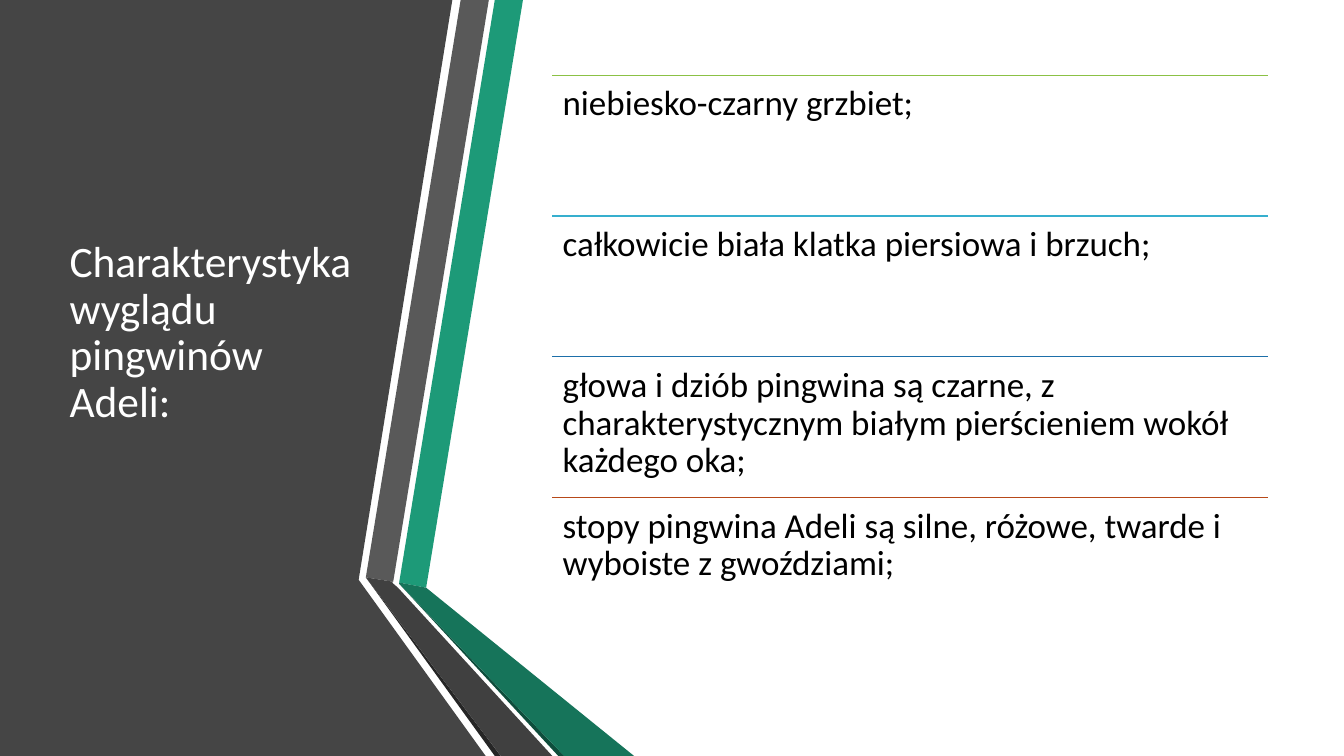
from lxml import etree
from pptx import Presentation
from pptx import util as u
from pptx.dml.color import RGBColor
from pptx.enum import shapes, text
from pptx.oxml.ns import qn

FONT = "Calibri"
PAGE_WIDTH, PAGE_HEIGHT = 33.87, 19.05

PANEL = [(0, 0), (11.4, 0), (9.04, 14.61), (12.24, 19.05), (0, 19.05)]
RIBBONS = [
    ("1D9A78", [(10.06, 14.68), (10.74, 14.81), (13.18, 0), (12.47, 0)]),
    ("595959", [(12.32, 0), (11.61, 0), (9.22, 14.55), (9.91, 14.66)]),
    ("262626", [(9.22, 14.55), (12.47, 19.05), (12.62, 19.05)]),
    ("0E4D3C", [(10.06, 14.71), (14.07, 19.05), (14.22, 19.05)]),
    ("16745A", [(10.06, 14.71), (14.22, 19.05), (15.98, 19.05),
                (10.74, 14.81), (10.06, 14.68)]),
    ("404040", [(13.92, 19.05), (10.03, 14.81), (9.88, 14.68),
                (9.91, 14.66), (9.22, 14.55), (12.62, 19.05)]),
]
TITLE = "Charakterystyka\vwyglądu pingwinów Adeli:"
FEATURES = [
    ("8BC145", "niebiesko-czarny grzbiet;"),
    ("36AFCE", "całkowicie biała klatka piersiowa i brzuch;"),
    ("1D6FA9", "głowa i dziób pingwina są czarne, "
               "z charakterystycznym białym pierścieniem wokół każdego oka;"),
    ("B74919", "stopy pingwina Adeli są silne, różowe, twarde "
               "i wyboiste z gwoździami;"),
]


def color(value):
    return RGBColor.from_string(value)


def format_text(frame, size, value):
    frame.word_wrap = True
    frame.auto_size = text.MSO_AUTO_SIZE.NONE
    for para in frame.paragraphs:
        para.alignment = text.PP_ALIGN.LEFT
        para.line_spacing = 0.9
        for span in para.runs:
            span.font.name = FONT
            span.font.size = u.Pt(size)
            span.font.color.rgb = color(value)


def add_polygon(parent, left, top, points, fill):
    corners = [(u.Cm(left + x), u.Cm(top + y)) for x, y in points]
    builder = parent.shapes.build_freeform(*corners[0])
    builder.add_line_segments(corners[1:], close=True)
    polygon = builder.convert_to_shape()
    polygon.shadow.inherit = False
    polygon.fill.solid()
    polygon.fill.fore_color.rgb = color(fill)
    polygon.line.fill.background()


def add_backdrop(page, left, top):
    add_polygon(page, left, top, PANEL, "454545")
    ribbons = page.shapes.add_group_shape()
    for fill, points in RIBBONS:
        add_polygon(ribbons, left, top, points, fill)


def place_title(page, left, top, width, height):
    title = page.shapes.title
    title.left, title.top = u.Cm(left), u.Cm(top)
    title.width, title.height = u.Cm(width), u.Cm(height)
    frame = title.text_frame
    frame.text = TITLE
    frame.vertical_anchor = text.MSO_ANCHOR.MIDDLE
    frame.margin_bottom = u.Cm(1.3)
    format_text(frame, 31, "FFFFFF")


def add_rule(parent, left, top, width, value):
    rule = parent.shapes.add_connector(
        shapes.MSO_CONNECTOR.STRAIGHT,
        u.Cm(left), u.Cm(top), u.Cm(left + width), u.Cm(top))
    rule.line.color.rgb = color(value)
    rule.line.width = u.Pt(1)
    etree.SubElement(rule._element.spPr, qn("a:effectLst"))


def add_feature(parent, left, top, width, height, wording):
    box = parent.shapes.add_textbox(
        u.Cm(left), u.Cm(top), u.Cm(width), u.Cm(height))
    frame = box.text_frame
    frame.margin_left = frame.margin_right = u.Cm(0.26)
    frame.margin_top = frame.margin_bottom = u.Cm(0.26)
    frame.text = wording
    format_text(frame, 25, "000000")


def add_feature_list(page, left, top, width, height):
    features = page.shapes.add_group_shape()
    row_height = height / len(FEATURES)
    for index, (value, wording) in enumerate(FEATURES):
        row_top = top + index * row_height
        add_rule(features, left, row_top, width, value)
        add_feature(features, left, row_top, width, row_height, wording)


def main():
    deck = Presentation()
    deck.slide_width = u.Cm(PAGE_WIDTH)
    deck.slide_height = u.Cm(PAGE_HEIGHT)
    page = deck.slides.add_slide(deck.slide_layouts.get_by_name("Title Only"))
    page.background.fill.solid()
    page.background.fill.fore_color.rgb = color("FFFFFF")
    add_backdrop(page, 0, 0)
    place_title(page, 1.5, 1.9, 7.72, 14.18)
    title = page.shapes.title._element
    title.getparent().append(title)
    add_feature_list(page, 13.92, 1.9, 18.03, 14.18)
    deck.save("out.pptx")


if __name__ == "__main__":
    main()
